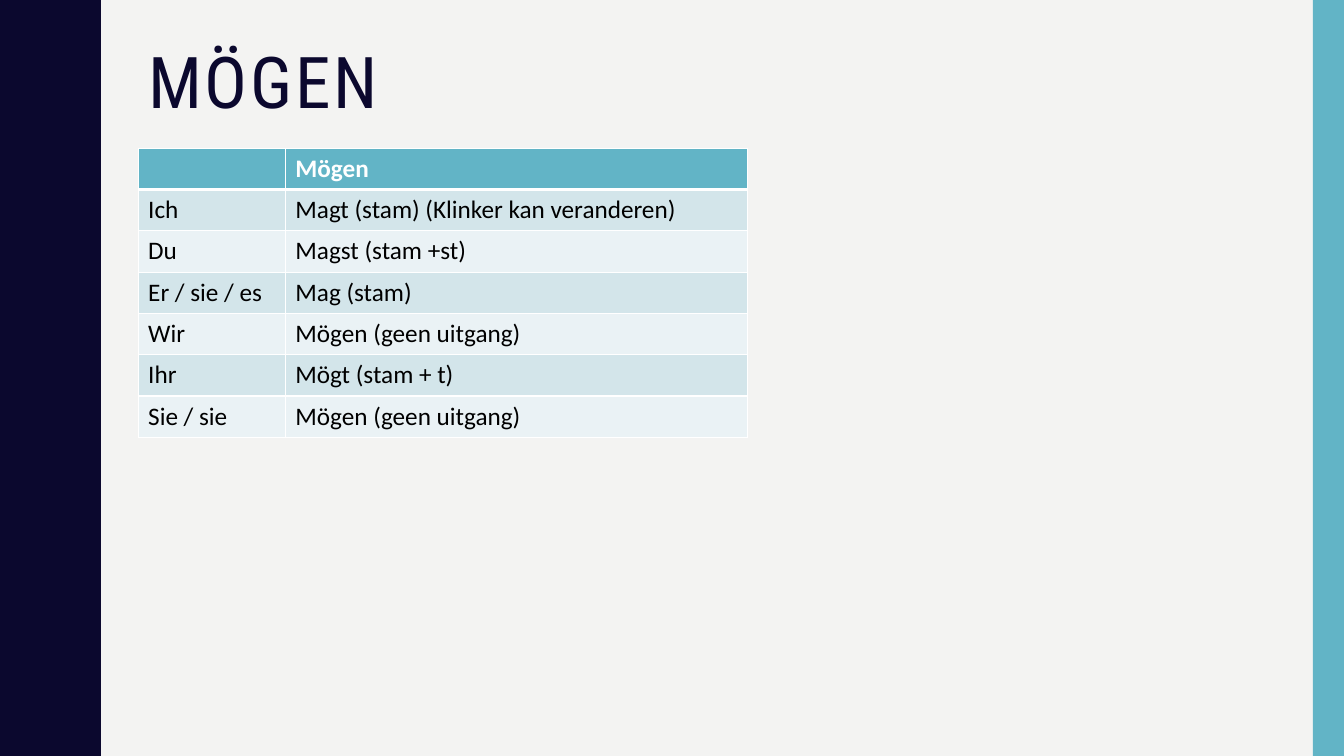
from dataclasses import dataclass

from lxml import etree
from pptx import Presentation
from pptx.dml.color import RGBColor
from pptx.enum.shapes import MSO_SHAPE
from pptx.enum.text import MSO_ANCHOR
from pptx.oxml.ns import qn
from pptx.util import Inches, Pt

RECTANGLE = MSO_SHAPE.RECTANGLE
TOP = MSO_ANCHOR.TOP

WIDTH, HEIGHT = 13.33, 7.5
LEFT = 1.37
COLUMNS = (1.46, 4.58)
ROW_HEIGHT = 0.41
WAVES = 5
WAVE_LEFT, WAVE_RIGHT = 0.78, 0.97
# First quarter of one wave, from the trough to the middle of the slope.
QUARTER_WAVE = [(0.78, 0), (0.78, 0.07), (0.79, 0.14), (0.8, 0.2),
                (0.81, 0.25), (0.83, 0.29), (0.85, 0.33)]

CONJUGATION = [
    ("", "Mögen"),
    ("Ich", "Magt (stam) (Klinker kan veranderen)"),
    ("Du", "Magst (stam +st)"),
    ("Er / sie / es", "Mag (stam)"),
    ("Wir", "Mögen (geen uitgang)"),
    ("Ihr", "Mögt (stam + t)"),
    ("Sie / sie", "Mögen (geen uitgang)"),
]


@dataclass(frozen=True)
class Theme:
    background: str = "F3F3F2"
    navy: str = "0B082E"
    teal: str = "62B4C6"
    bands: tuple = ("EAF2F5", "D3E5EA")
    white: str = "FFFFFF"
    black: str = "000000"
    title_font: str = "Roboto Condensed"
    body_font: str = "Calibri"
    title_size: int = 51
    body_size: int = 18


THEME = Theme()


def paint(fill, color):
    fill.solid()
    fill.fore_color.rgb = RGBColor.from_string(color)


def finish_shape(shape, color):
    shape.shadow.inherit = False
    paint(shape.fill, color)
    shape.line.fill.background()


def write(para, text, font, size, color, bold=False, spacing=0):
    span = para.add_run()
    span.text = text
    span.font.name = font
    span.font.size = Pt(size)
    span.font.bold = bold
    span.font.color.rgb = RGBColor.from_string(color)
    if spacing:
        span.font._element.set("spc", str(spacing * 100))


def wave_points():
    """Return the wavy edge from the top of the slide to the bottom."""
    period = HEIGHT / WAVES
    half = period / 2
    middle = ((WAVE_LEFT + WAVE_RIGHT) / 2, half / 2)
    upper = [(WAVE_LEFT + WAVE_RIGHT - x, half - y) for x, y in reversed(QUARTER_WAVE)]
    rise = QUARTER_WAVE + [middle] + upper
    fall = [(x, period - y) for x, y in reversed(rise[1:-1])]
    points = [(x, y + wave * period) for wave in range(WAVES) for x, y in rise + fall]
    return points + [(WAVE_LEFT, HEIGHT)]


def add_wave(page):
    builder = page.shapes.build_freeform(0, 0, scale=Inches(1))
    builder.add_line_segments(wave_points() + [(0, HEIGHT)], close=True)
    finish_shape(builder.convert_to_shape(), THEME.navy)


def add_side_bar(page, width):
    bar = page.shapes.add_shape(RECTANGLE, Inches(WIDTH - width), 0,
                                Inches(width), Inches(HEIGHT))
    finish_shape(bar, THEME.teal)


def add_title(page, text):
    box = page.shapes.add_textbox(Inches(LEFT), Inches(0.42), Inches(11.13), Inches(1.63))
    frame = box.text_frame
    frame.word_wrap = True
    frame.vertical_anchor = TOP
    para = frame.paragraphs[0]
    para.line_spacing = 0.9
    write(para, text, THEME.title_font, THEME.title_size, THEME.navy, spacing=2)


def set_borders(cell, widths):
    """Draw white borders; widths holds points for left, right, top, bottom."""
    properties = cell._tc.get_or_add_tcPr()
    for index, (side, width) in enumerate(zip(("lnL", "lnR", "lnT", "lnB"), widths)):
        line = etree.Element(qn(f"a:{side}"), w=str(Pt(width)))
        fill = etree.SubElement(line, qn("a:solidFill"))
        etree.SubElement(fill, qn("a:srgbClr"), val=THEME.white)
        properties.insert(index, line)


def add_conjugation_table(page):
    frame = page.shapes.add_table(
        len(CONJUGATION), len(COLUMNS), Inches(LEFT), Inches(1.47),
        Inches(sum(COLUMNS)), Inches(ROW_HEIGHT * len(CONJUGATION)))
    table = frame.table
    for column, width in zip(table.columns, COLUMNS):
        column.width = Inches(width)
    for row, texts in enumerate(CONJUGATION):
        header = row == 0
        table.rows[row].height = Inches(ROW_HEIGHT)
        for column, text in enumerate(texts):
            cell = table.cell(row, column)
            paint(cell.fill, THEME.teal if header else THEME.bands[row % 2])
            set_borders(cell, (1, 1, 3 if row == 1 else 1, 3 if header else 1))
            if text:
                write(cell.text_frame.paragraphs[0], text, THEME.body_font,
                      THEME.body_size, THEME.white if header else THEME.black,
                      bold=header)


def main():
    deck = Presentation()
    deck.slide_width, deck.slide_height = Inches(WIDTH), Inches(HEIGHT)
    page = deck.slides.add_slide(deck.slide_layouts[6])
    paint(page.background.fill, THEME.background)
    add_wave(page)
    add_side_bar(page, 0.31)
    add_title(page, "MÖGEN")
    add_conjugation_table(page)
    deck.save("out.pptx")


if __name__ == "__main__":
    main()
